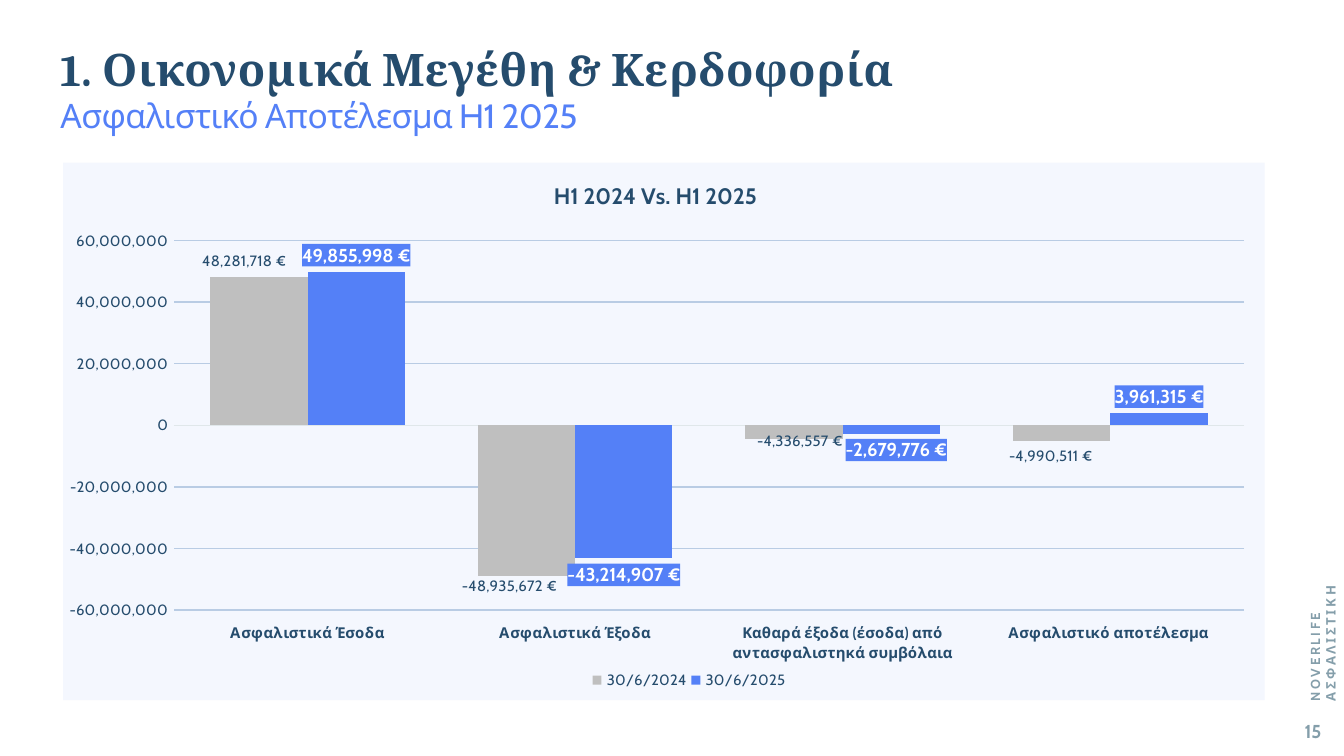
from copy import deepcopy

from pptx import Presentation
from pptx import util as u
from pptx.chart.data import CategoryChartData
from pptx.dml.color import RGBColor
from pptx.enum import chart as ch
from pptx.enum import text as t
from pptx.oxml import parse_xml
from pptx.oxml.ns import nsdecls

Inches = u.Inches
COLORS = {"navy": "254C6D", "blue": "5480F7", "gray": "BFBFBF", "muted": "849EAA",
          "panel": "F4F7FE", "grid": "B9CCE4", "axis": "E0E7EA", "white": "FFFFFF"}


def style(font, size, color, bold=False, name="Cabin"):
    font.name, font.size, font.bold = name, u.Pt(size), bold
    font.color.rgb = RGBColor.from_string(COLORS[color])


def place(parent, index, modes, **thousandths):
    """Give a chart part a manual layout, in thousandths of the chart's size."""
    for old in parent.xpath("c:layout"):
        parent.remove(old)
    values = modes | {key: n / 1000 for key, n in thousandths.items()}
    items = "".join(f'<c:{key} val="{value}"/>' for key, value in values.items())
    parent.insert(index, parse_xml(
        f'<c:layout {nsdecls("c")}><c:manualLayout>{items}</c:manualLayout></c:layout>'))


prs = Presentation()
prs.slide_width = Inches(10)
prs.slide_height = prs.slide_width * 9 // 16
slide = prs.slides.add_slide(prs.slide_layouts[5])

# Title and subtitle
title = slide.shapes.title
title.left, title.top, title.width, title.height = [Inches(n) for n in (0.35, 0.21, 9.06, 0.71)]
frame = title.text_frame
frame.text = "1. Οικονομικά Μεγέθη & Κερδοφορία\vΑσφαλιστικό Αποτέλεσμα H1 2025"
frame.word_wrap = True
frame.auto_size = t.MSO_AUTO_SIZE.NONE
frame.vertical_anchor = t.MSO_ANCHOR.TOP
frame.margin_left = frame.margin_right = frame.margin_top = frame.margin_bottom = Inches(0.1)
heading = frame.paragraphs[0]
heading.alignment = t.PP_ALIGN.LEFT
main, subtitle = heading.runs
style(main.font, 24, "navy", True, "Cambria")
style(subtitle.font, 18, "blue")
main.font._element.set("spc", "20")
subtitle.font._element.set("spc", "-30")

# Page number and side label
for words, box, size, align, turn, spacing in (
        ("15", (9.41, 5.31, 0.52, 0.27), 10, t.PP_ALIGN.RIGHT, 0, 0),
        ("NOVERLIFE ΑΣΦΑΛΙΣΤΙΚΗ", (8.93, 4.35, 1.71, 0.22), 7, t.PP_ALIGN.LEFT, 270, 140)):
    margin_text = slide.shapes.add_textbox(*[Inches(n) for n in box])
    margin_text.rotation = turn
    frame = margin_text.text_frame
    frame.text = words
    frame.word_wrap = True
    if turn:
        frame.margin_right = Inches(0.3)
    frame.paragraphs[0].alignment = align
    run = frame.paragraphs[0].runs[0]
    style(run.font, size, "muted", True)
    run.font._element.set("spc", str(spacing))

# Chart data
data = CategoryChartData()
data.categories = ["Ασφαλιστικά Έσοδα", "Ασφαλιστικά Έξοδα",
                   "Καθαρά έξοδα (έσοδα) από αντασφαλιστηκά συμβόλαια",
                   "Ασφαλιστικό αποτέλεσμα "]
data.add_series("30/6/2024", (48281718, -48935672, -4336557, -4990511))
data.add_series("30/6/2025", (49855998, -43214907, -2679776, 3961315))
chart = slide.shapes.add_chart(
    ch.XL_CHART_TYPE.COLUMN_CLUSTERED, Inches(0.47), Inches(1.21),
    Inches(8.94), Inches(4), data).chart
style(chart.font, 8, "navy")

# Panel behind the chart
chart.element.xpath("c:chart")[0].addnext(parse_xml(
    f'<c:spPr {nsdecls("c", "a")}><a:solidFill><a:srgbClr val="{COLORS["panel"]}"/>'
    '</a:solidFill><a:ln><a:noFill/></a:ln></c:spPr>'))

# Chart title, plot area and legend
edges = {"xMode": "edge", "yMode": "edge"}
chart.has_title = True
chart.chart_title.text_frame.text = "H1 2024 Vs. H1 2025"
style(chart.chart_title.text_frame.paragraphs[0].runs[0].font, 12, "navy", True)
place(chart.element.xpath("c:chart/c:title")[0], 1, edges, x=405, y=27)
place(chart.element.xpath("c:chart/c:plotArea")[0], 0,
      {"layoutTarget": "inner"} | edges, x=92, y=145, w=891, h=688)
chart.has_legend = True
chart.legend.position = ch.XL_LEGEND_POSITION.BOTTOM
chart.legend.include_in_layout = False
style(chart.legend.font, 8, "navy")
place(chart.element.xpath("c:chart/c:legend")[0], 1, edges, x=437, y=938, w=168, h=50)

# Axes
categories, amounts = chart.category_axis, chart.value_axis
for axis, bold in ((categories, True), (amounts, False)):
    axis.major_tick_mark = axis.minor_tick_mark = ch.XL_TICK_MARK.NONE
    style(axis.tick_labels.font, 8, "navy", bold)
categories.tick_label_position = ch.XL_TICK_LABEL_POSITION.LOW
amounts.minimum_scale, amounts.maximum_scale, amounts.major_unit = -60e6, 60e6, 20e6
amounts.tick_labels.number_format = "#,##0"
amounts.tick_labels.number_format_is_linked = False
amounts.format.line.fill.background()
for line, color in ((categories.format.line, "axis"),
                    (amounts.major_gridlines.format.line, "grid")):
    line.color.rgb = RGBColor.from_string(COLORS[color])
    line.width = u.Pt(0.75)

# Columns and their labels; shifts move single labels
plot = chart.plots[0]
plot.gap_width, plot.overlap, plot.vary_by_categories = 75, 0, False
looks = (("gray", 8, "navy", False,
          {0: (-12, -2), 1: (-14, -10), 2: (5, -24), 3: (-9, 0)}),
         ("blue", 10, "white", True, {2: (4, 0)}))
for series, (fill, size, color, bold, shifts) in zip(plot.series, looks):
    series.format.fill.solid()
    series.format.fill.fore_color.rgb = RGBColor.from_string(COLORS[fill])
    series.invert_if_negative = False
    labels = series.data_labels
    labels.show_value = True
    labels.number_format = '#,##0\\ "€"'
    labels.number_format_is_linked = False
    labels.position = ch.XL_LABEL_POSITION.OUTSIDE_END
    style(labels.font, size, color, bold)
    group = series._element.xpath("c:dLbls")[0]
    if fill == "blue":
        group.xpath("c:numFmt")[0].addnext(parse_xml(
            f'<c:spPr {nsdecls("c", "a")}><a:solidFill><a:srgbClr val="{COLORS[fill]}"/>'
            '</a:solidFill></c:spPr>'))
    shared = group.xpath("c:numFmt | c:spPr | c:txPr")
    for index, (x, y) in shifts.items():
        series.points[index].data_label.position = ch.XL_LABEL_POSITION.OUTSIDE_END
        label = group.xpath(f"c:dLbl[c:idx/@val='{index}']")[0]
        for old in label.xpath("c:numFmt | c:spPr | c:txPr"):
            label.remove(old)
        place(label, 1, {}, x=x, y=y)
        for offset, part in enumerate(shared):
            label.insert(2 + offset, deepcopy(part))

prs.save("out.pptx")
